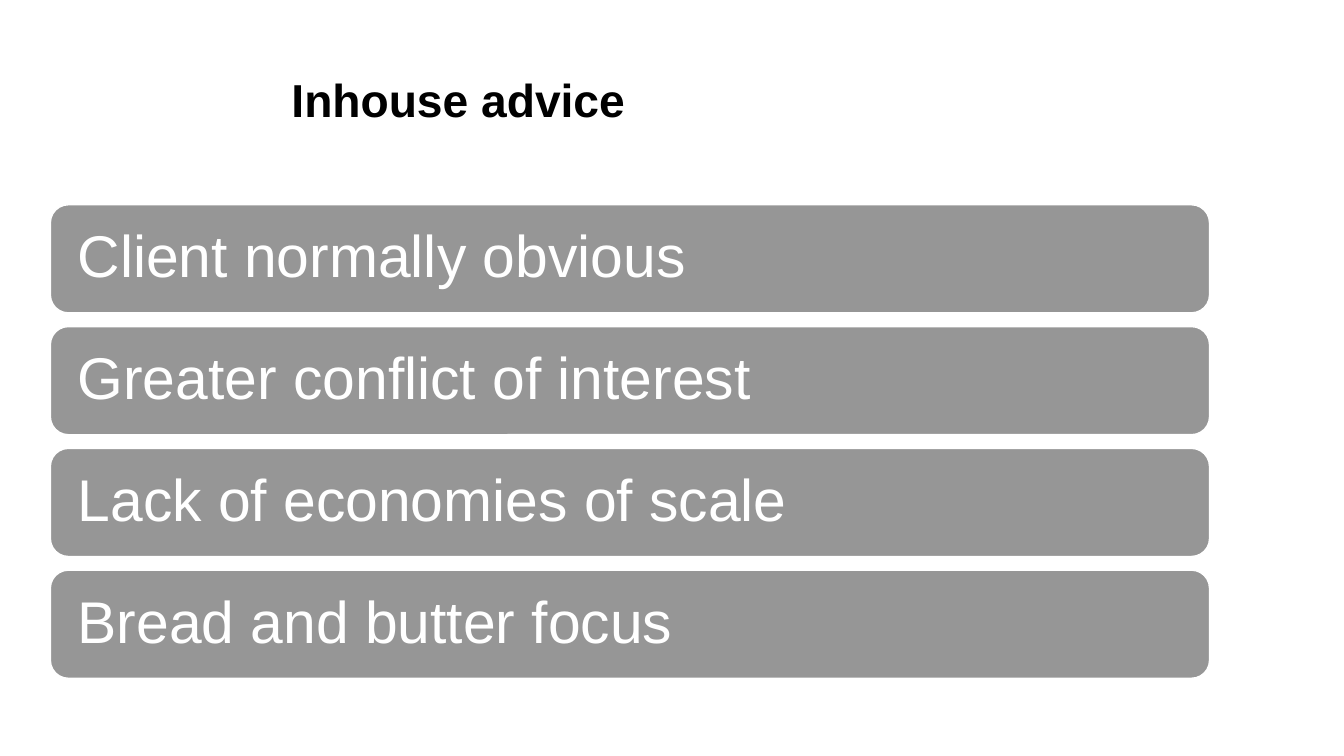
import pptx
import pptx.dml.color
import pptx.enum.shapes
import pptx.enum.text
import pptx.util

PX = 9525  # EMU per px, 96 px to the inch
COLORS = {"title": "000000", "bar": "969696", "light": "FFFFFF"}
POINTS = [
    "Client normally obvious",
    "Greater conflict of interest",
    "Lack of economies of scale",
    "Bread and butter focus",
]
BAR_LEFT, BAR_TOP, BAR_WIDTH, BAR_HEIGHT = 48, 195, 1104, 103
BAR_STEP = 116
BAR_INSET = 21


def rgb(name):
    return pptx.dml.color.RGBColor.from_string(COLORS[name])


def write(shape, text, size, color, bold):
    frame = shape.text_frame
    frame.text = text
    frame.word_wrap = True
    frame.vertical_anchor = pptx.enum.text.MSO_ANCHOR.MIDDLE
    paragraph = frame.paragraphs[0]
    paragraph.alignment = pptx.enum.text.PP_ALIGN.LEFT
    paragraph.line_spacing = 0.9
    font = paragraph.runs[0].font
    font.name = "Arial"
    font.size = pptx.util.Pt(size)
    font.bold = bold
    font.color.rgb = rgb(color)


deck = pptx.Presentation()
deck.slide_width = 1280 * PX
deck.slide_height = 720 * PX
slide = deck.slides.add_slide(deck.slide_layouts[5])

# Title
title = slide.shapes.title
title.left, title.top = 268 * PX, 38 * PX
title.width, title.height = 883 * PX, 120 * PX
write(title, "Inhouse advice", 33, "title", True)

# Stacked bars, one per point
for row, point in enumerate(POINTS):
    bar = slide.shapes.add_shape(
        pptx.enum.shapes.MSO_SHAPE.ROUNDED_RECTANGLE,
        BAR_LEFT * PX, (BAR_TOP + row * BAR_STEP) * PX,
        BAR_WIDTH * PX, BAR_HEIGHT * PX)
    bar.shadow.inherit = False
    bar.fill.solid()
    bar.fill.fore_color.rgb = rgb("bar")
    bar.line.color.rgb = rgb("light")
    bar.line.width = pptx.util.Pt(1)
    write(bar, point, 42, "light", False)
    bar.text_frame.margin_left = bar.text_frame.margin_right = BAR_INSET * PX
    bar.text_frame.margin_top = bar.text_frame.margin_bottom = BAR_INSET * PX

deck.save("out.pptx")
